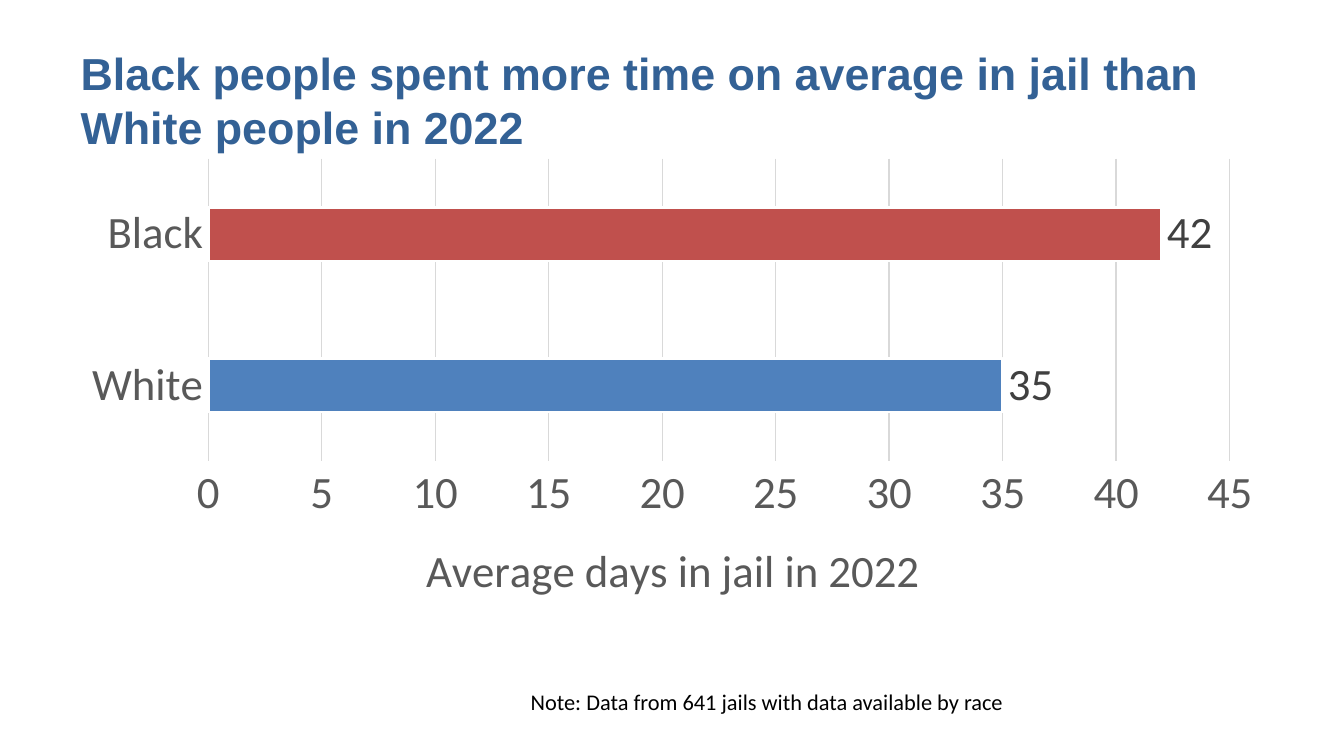
from lxml import etree
from pptx import Presentation
from pptx.chart.data import CategoryChartData
from pptx.dml.color import RGBColor
from pptx.enum import chart as ch, text
from pptx.oxml.ns import qn
from pptx.util import Inches, Pt

COLORS = {"title": "336195", "black": "C0504D", "white": "4F81BD", "axis": "595959",
          "label": "404040", "grid": "D9D9D9", "note": "000000", "edge": "FFFFFF"}
CHART_W, CHART_H = 9, 3.62


def rgb(name):
    return RGBColor.from_string(COLORS[name])


def write(tf, content, size, color, font="Calibri", bold=False, align=None):
    p = tf.paragraphs[0]
    p.alignment = align
    r = p.add_run()
    r.text = content
    r.font.size, r.font.name, r.font.bold = Pt(size), font, bold
    r.font.color.rgb = rgb(color)


prs = Presentation()
prs.slide_width = Inches(10)
prs.slide_height = prs.slide_width * 9 // 16
s = prs.slides.add_slide(prs.slide_layouts[5])

# Title
title = s.shapes.title
title.left, title.top, title.width, title.height = map(Inches, (0.5, 0.29, 9, 0.53))
tf = title.text_frame
tf.word_wrap = True
tf.auto_size = text.MSO_AUTO_SIZE.NONE
tf.vertical_anchor = text.MSO_ANCHOR.TOP
write(tf, "Black people spent more time on average in jail than White people in 2022",
      24, "title", font="Arial", bold=True, align=text.PP_ALIGN.LEFT)

# Bar chart
data = CategoryChartData()
data.categories = ["White", "Black"]
data.add_series("Series 1", [35, 42])
chart = s.shapes.add_chart(ch.XL_CHART_TYPE.BAR_CLUSTERED, Inches(0.5), Inches(1.11),
                           Inches(CHART_W), Inches(CHART_H), data).chart
chart.has_legend = chart.has_title = False
chart.font.size, chart.font.name = Pt(24), "Calibri"
chart.font.color.rgb = rgb("note")

plot = chart.plots[0]
plot.gap_width = 182
plot.vary_by_categories = False
series = plot.series[0]
for fmt, fill in ((series.format, "black"), (series.points[0].format, "white")):
    fmt.fill.solid()
    fmt.fill.fore_color.rgb = rgb(fill)
    fmt.line.color.rgb = rgb("edge")
    fmt.line.width = Pt(1.5)

labels = series.data_labels
labels.show_value = True
labels.position = ch.XL_LABEL_POSITION.OUTSIDE_END

cat_axis, val_axis = chart.category_axis, chart.value_axis
for axis in (cat_axis, val_axis):
    axis.major_tick_mark = axis.minor_tick_mark = ch.XL_TICK_MARK.NONE
for font, color in ((cat_axis.tick_labels.font, "axis"),
                    (val_axis.tick_labels.font, "axis"), (labels.font, "label")):
    font.size, font.name = Pt(24), "Calibri"
    font.color.rgb = rgb(color)

val_axis.minimum_scale = 0
val_axis.format.line.fill.background()
val_axis.has_major_gridlines = True
cat_axis.has_major_gridlines = False
for line in (cat_axis.format.line, val_axis.major_gridlines.format.line):
    line.color.rgb = rgb("grid")
    line.width = Pt(0.75)
write(val_axis.axis_title.text_frame, "Average days in jail in 2022", 24, "axis")

# Fixed places for the plot area and the axis title, as fractions of the chart
plot_area = chart.element.find(".//" + qn("c:plotArea"))
axis_title = chart.element.find(".//" + qn("c:valAx") + "/" + qn("c:title"))
edges = {"xMode": "edge", "yMode": "edge"}
for parent, index, values in (
        (plot_area, 0, {"layoutTarget": "inner", **edges,
                        "x": 1.05 / CHART_W, "y": 0.07 / CHART_H,
                        "w": 7.6 / CHART_W, "h": 2.25 / CHART_H}),
        (axis_title, 1, {**edges, "x": 2.61 / CHART_W, "y": 2.85 / CHART_H})):
    for old in parent.findall(qn("c:layout")):
        parent.remove(old)
    layout = etree.Element(qn("c:layout"))
    manual = etree.SubElement(layout, qn("c:manualLayout"))
    for tag, value in values.items():
        etree.SubElement(manual, qn("c:" + tag)).set("val", str(value))
    parent.insert(index, layout)

# Note
note = s.shapes.add_textbox(Inches(3.85), Inches(5.07), Inches(4.64), Inches(0.3))
tf = note.text_frame
tf.word_wrap = True
tf.auto_size = text.MSO_AUTO_SIZE.SHAPE_TO_FIT_TEXT
write(tf, "Note: Data from 641 jails with data available by race", 12, "note")

prs.save("out.pptx")
